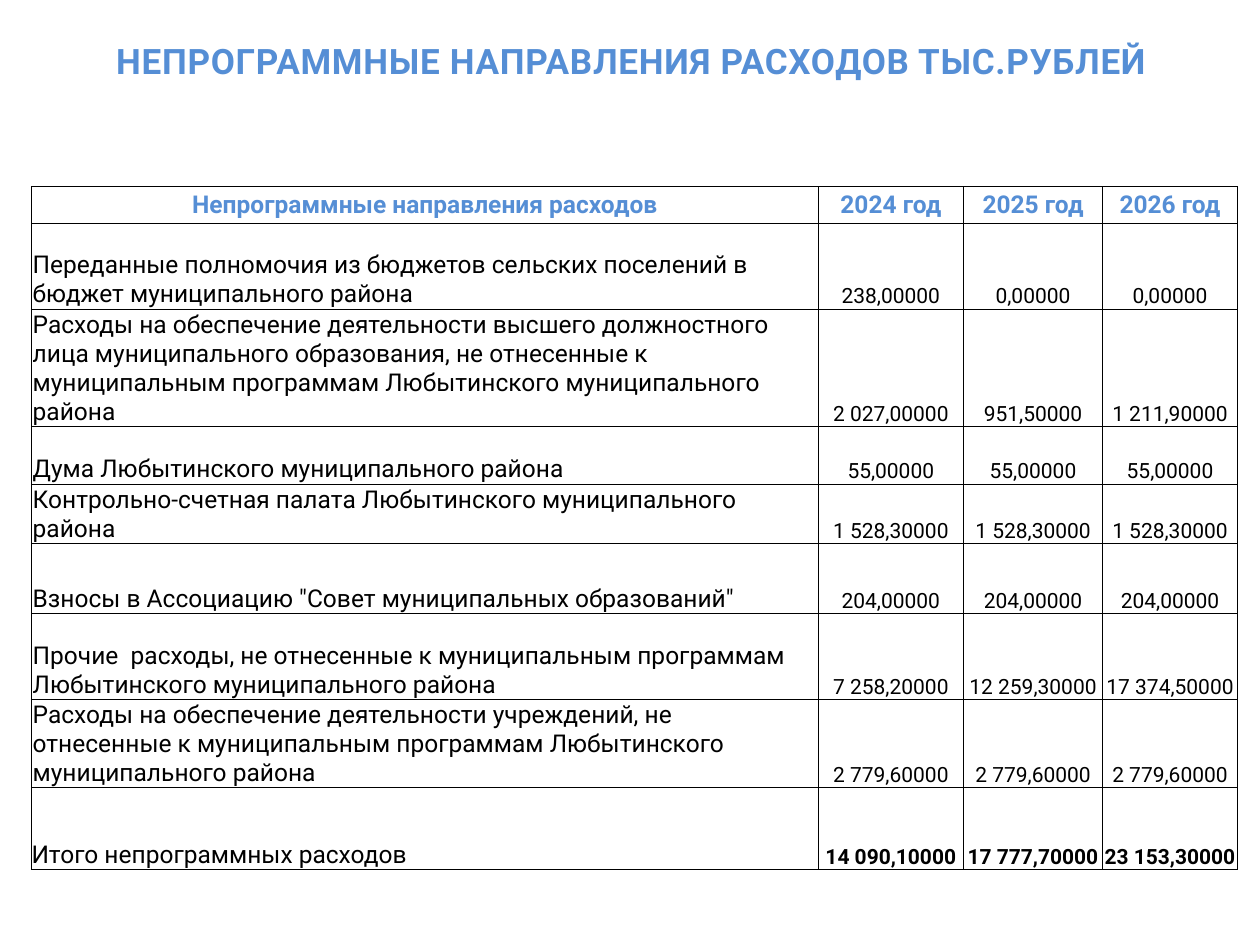
from lxml import etree
from pptx import Presentation
from pptx.dml.color import RGBColor
from pptx.enum.text import MSO_ANCHOR, MSO_AUTO_SIZE, PP_ALIGN
from pptx.oxml.ns import qn
from pptx.util import Pt

LEFT, CENTER = PP_ALIGN.LEFT, PP_ALIGN.CENTER
TOP, MIDDLE, BOTTOM = MSO_ANCHOR.TOP, MSO_ANCHOR.MIDDLE, MSO_ANCHOR.BOTTOM

FONT = "Roboto"
COLORS = {"accent": "558ED5", "text": "000000", "border": "000000"}

TITLE = "НЕПРОГРАММНЫЕ НАПРАВЛЕНИЯ РАСХОДОВ ТЫС.РУБЛЕЙ"
HEADER = ("Непрограммные направления расходов", "2024 год", "2025 год", "2026 год")
EXPENSES = [
    ("Переданные полномочия из бюджетов сельских поселений в бюджет муниципального района",
     "238,00000", "0,00000", "0,00000"),
    ("Расходы на обеспечение деятельности высшего должностного лица муниципального образования, "
     "не отнесенные к муниципальным программам Любытинского муниципального района",
     "2 027,00000", "951,50000", "1 211,90000"),
    ("Дума Любытинского муниципального района",
     "55,00000", "55,00000", "55,00000"),
    ("Контрольно-счетная палата Любытинского муниципального района",
     "1 528,30000", "1 528,30000", "1 528,30000"),
    ("Взносы в Ассоциацию \"Совет муниципальных образований\"",
     "204,00000", "204,00000", "204,00000"),
    ("Прочие  расходы, не отнесенные к муниципальным программам Любытинского муниципального района",
     "7 258,20000", "12 259,30000", "17 374,50000"),
    ("Расходы на обеспечение деятельности учреждений, не отнесенные к муниципальным программам "
     "Любытинского муниципального района",
     "2 779,60000", "2 779,60000", "2 779,60000"),
]
TOTAL = ("Итого непрограммных расходов", "14 090,10000", "17 777,70000", "23 153,30000")
ROWS = [HEADER, *EXPENSES, TOTAL]

COLUMN_WIDTHS = (449.7, 82.8, 79.7, 76.9)
ROW_HEIGHTS = (21, 49, 62.6, 33.1, 33.1, 40.3, 49, 49, 46.8)


def write_text(frame, text, size, color="text", bold=False, align=LEFT,
               line_spacing=None, tracking=None):
    frame.word_wrap = True
    paragraph = frame.paragraphs[0]
    paragraph.alignment = align
    if line_spacing:
        paragraph.line_spacing = line_spacing
    run = paragraph.add_run()
    run.text = text
    font = run.font
    font.name, font.size, font.bold = FONT, Pt(size), bold
    font.color.rgb = RGBColor.from_string(COLORS[color])
    if tracking:
        run._r.get_or_add_rPr().set("spc", str(round(tracking * 100)))


def set_margins(area, margin, top=None, bottom=0):
    area.margin_left = area.margin_right = Pt(margin)
    area.margin_top = Pt(margin if top is None else top)
    area.margin_bottom = Pt(bottom)


def add_borders(cell, width=0.5):
    properties = cell._tc.get_or_add_tcPr()
    for position, side in enumerate(("lnL", "lnR", "lnT", "lnB")):
        line = etree.Element(qn(f"a:{side}"), w=str(Pt(width)))
        fill = etree.SubElement(line, qn("a:solidFill"))
        etree.SubElement(fill, qn("a:srgbClr"), val=COLORS["border"])
        properties.insert(position, line)


def add_title(slide):
    title = slide.shapes.title
    title.left, title.top, title.width, title.height = Pt(22.3), Pt(20.9), Pt(676.8), Pt(20.9)
    frame = title.text_frame
    frame.auto_size = MSO_AUTO_SIZE.NONE
    frame.vertical_anchor = TOP
    set_margins(frame, 0, top=4.4)
    write_text(frame, TITLE, size=20, color="accent", bold=True, align=CENTER,
               line_spacing=0.9, tracking=0.4)


def add_expense_table(slide):
    table = slide.shapes.add_table(
        len(ROWS), len(HEADER), Pt(18), Pt(106.6),
        Pt(sum(COLUMN_WIDTHS)), Pt(sum(ROW_HEIGHTS))).table
    table.horz_banding = False
    for column, width in zip(table.columns, COLUMN_WIDTHS):
        column.width = Pt(width)
    for row, height in zip(table.rows, ROW_HEIGHTS):
        row.height = Pt(height)

    for row_index, values in enumerate(ROWS):
        is_header, is_total = values is HEADER, values is TOTAL
        for column_index, text in enumerate(values):
            is_name = column_index == 0
            cell = table.cell(row_index, column_index)
            cell.fill.background()
            cell.vertical_anchor = MIDDLE if is_header else BOTTOM
            set_margins(cell, 0 if is_header or (is_total and is_name) else 0.7)
            add_borders(cell)
            write_text(cell.text_frame, text,
                       size=14 if is_header or is_name else 12,
                       color="accent" if is_header else "text",
                       bold=is_header or (is_total and not is_name),
                       align=LEFT if is_name and not is_header else CENTER)


def main():
    presentation = Presentation()
    presentation.slide_width, presentation.slide_height = Pt(720), Pt(540)
    slide = presentation.slides.add_slide(presentation.slide_layouts.get_by_name("Title Only"))
    add_title(slide)
    add_expense_table(slide)
    presentation.save("out.pptx")


if __name__ == "__main__":
    main()
